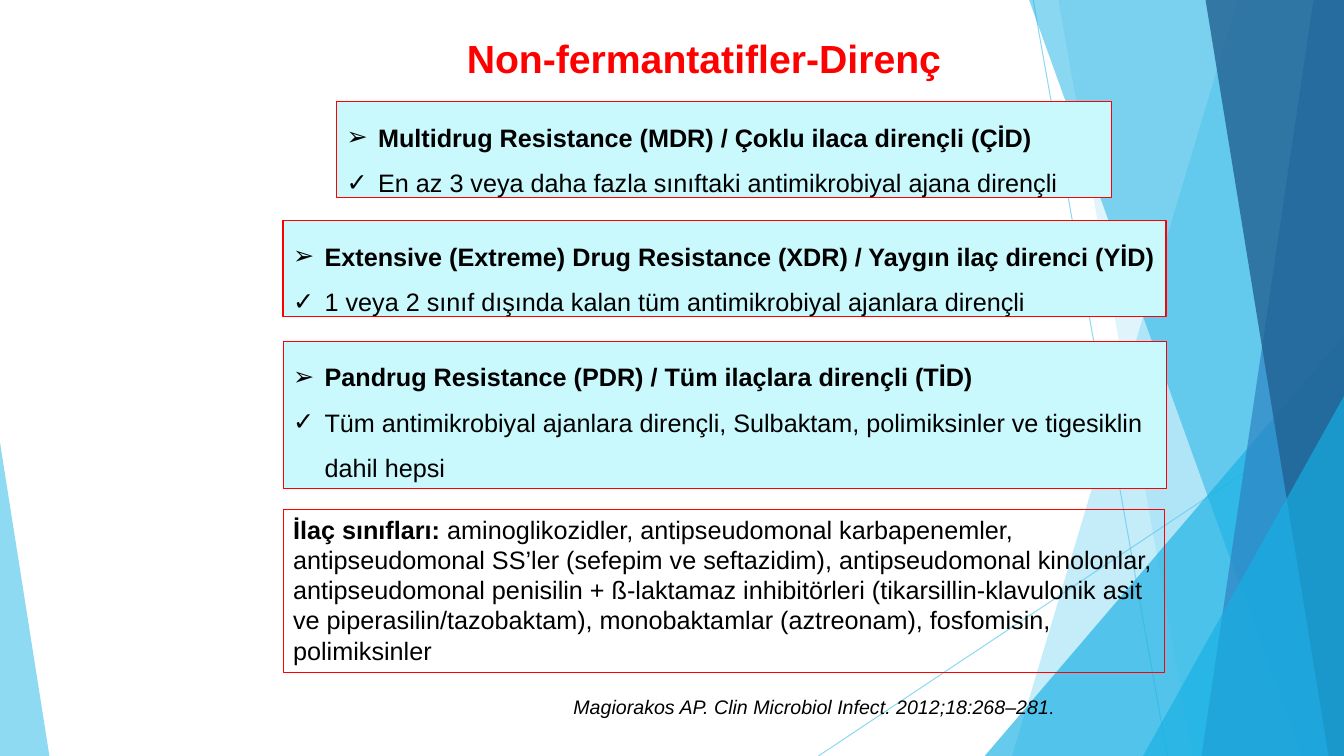
from dataclasses import dataclass

from pptx import Presentation
from pptx.dml.color import RGBColor
from pptx.enum.shapes import MSO_CONNECTOR as Connector, MSO_SHAPE as Preset
from pptx.enum.text import MSO_ANCHOR as Anchor, PP_ALIGN as Align
from pptx.oxml.ns import qn
from pptx.util import Pt
from lxml.etree import SubElement


@dataclass(frozen=True)
class Theme:
    red: str = "FF0000"
    black: str = "000000"
    panel: str = "C9F8FD"
    sky: str = "5FCBEF"
    cyan: str = "17B0E4"
    blue: str = "2E83C3"
    navy: str = "226292"
    font: str = "Arial"
    accent_font: str = "Karla"
    title: int = 28
    body: int = 18
    citation: int = 14


THEME = Theme()
WIDTH, HEIGHT = 960, 540

# Facets: left x at the top, left x at the bottom, colour, opacity
BACK_FACETS = [(884.2, 722.9, THEME.sky, 36), (756, 851.8, THEME.sky, 20)]
FRONT_FACETS = [
    (735.1, 929.5, THEME.cyan, 50),
    (938.2, 858.2, THEME.blue, 70),
    (861.1, 949, THEME.navy, 80),
]

# Definitions: box, line width, heading, explanation
DEFINITIONS = [
    ((240.5, 72.7, 553.7, 68.4), 1,
     "Multidrug Resistance (MDR) / Çoklu ilaca dirençli (ÇİD)",
     "En az 3 veya daha fazla sınıftaki antimikrobiyal ajana dirençli"),
    ((202.3, 157.7, 630.7, 68.4), 1,
     "Extensive (Extreme) Drug Resistance (XDR) / Yaygın ilaç direnci (YİD)",
     "1 veya 2 sınıf dışında kalan tüm antimikrobiyal ajanlara dirençli"),
    ((202.3, 244.1, 630.7, 105.1), 0.75,
     "Pandrug Resistance (PDR) / Tüm ilaçlara dirençli (TİD)",
     "Tüm antimikrobiyal ajanlara dirençli, Sulbaktam, polimiksinler ve "
     "tigesiklin dahil hepsi"),
]
CLASSES_LABEL = "İlaç sınıfları: "
CLASSES = (
    "aminoglikozidler, antipseudomonal karbapenemler, antipseudomonal SS’ler "
    "(sefepim ve seftazidim), antipseudomonal kinolonlar, antipseudomonal "
    "penisilin + ß-laktamaz inhibitörleri (tikarsillin-klavulonik asit ve "
    "piperasilin/tazobaktam), monobaktamlar (aztreonam), fosfomisin, polimiksinler"
)


def points(values):
    return [Pt(value) for value in values]


def set_opacity(color_format, percent):
    color = color_format._xFill.find(qn("a:srgbClr"))
    SubElement(color, qn("a:alpha")).set("val", str(percent * 1000))


def fill_translucent(shape, color, percent):
    shape.shadow.inherit = False
    shape.line.fill.background()
    shape.fill.solid()
    shape.fill.fore_color.rgb = RGBColor.from_string(color)
    set_opacity(shape.fill.fore_color, percent)


def style_span(span, size, color=THEME.black, bold=False, italic=False, font=THEME.font):
    span.font.name = font
    span.font.size = Pt(size)
    span.font.bold = bold
    span.font.italic = italic
    span.font.color.rgb = RGBColor.from_string(color)


def add_span(para, text, size, **style):
    span = para.add_run()
    span.text = text
    style_span(span, size, **style)


def set_bullet(para, symbol):
    properties = para._p.get_or_add_pPr()
    properties.set("marL", str(Pt(22.5)))
    properties.set("indent", str(-Pt(22.5)))
    SubElement(properties, qn("a:buFont")).set("typeface", THEME.font)
    SubElement(properties, qn("a:buChar")).set("char", symbol)


def draw_ray(page, start, end):
    ray = page.shapes.add_connector(Connector.STRAIGHT, *points(start + end))
    ray.line.width = Pt(0.75)
    ray.line.color.rgb = RGBColor.from_string(THEME.sky)
    set_opacity(ray.line.fill.fore_color, 70)
    SubElement(ray._element.spPr, qn("a:effectLst"))


def draw_facet(page, top_x, bottom_x, color, percent):
    outline = page.shapes.build_freeform(Pt(top_x), 0)
    corners = [(WIDTH, 0), (WIDTH, HEIGHT), (bottom_x, HEIGHT)]
    outline.add_line_segments([points(corner) for corner in corners], close=True)
    fill_translucent(outline.convert_to_shape(), color, percent)


def draw_triangle(page, box, apex, color, percent):
    triangle = page.shapes.add_shape(Preset.ISOSCELES_TRIANGLE, *points(box))
    triangle.adjustments[0] = apex
    fill_translucent(triangle, color, percent)


def draw_backdrop(page):
    draw_ray(page, (738, 0), (833.8, HEIGHT))
    draw_ray(page, (WIDTH, 290.2), (584.6, HEIGHT))
    for facet in BACK_FACETS:
        draw_facet(page, *facet)
    draw_triangle(page, (703.4, 239.8, 256.6, 300.2), 1, THEME.cyan, 66)
    for facet in FRONT_FACETS:
        draw_facet(page, *facet)
    draw_triangle(page, (816.5, 283, 143.5, 257), 1, THEME.cyan, 66)
    draw_triangle(page, (0, 316.1, 35.3, 223.9), 0, THEME.sky, 70)


def place_title(page, box):
    title = page.shapes.title
    title.left, title.top, title.width, title.height = points(box)
    frame = title.text_frame
    frame.text = "Non-fermantatifler-Direnç"
    frame.vertical_anchor = Anchor.TOP
    frame.word_wrap = True
    para = frame.paragraphs[0]
    para.alignment = Align.LEFT
    style_span(para.runs[0], THEME.title, THEME.red, bold=True)


def add_panel(page, box, line_width):
    panel = page.shapes.add_shape(Preset.RECTANGLE, *points(box))
    panel.shadow.inherit = False
    panel.fill.background()
    panel.line.color.rgb = RGBColor.from_string(THEME.red)
    panel.line.width = Pt(line_width)
    panel.text_frame.word_wrap = True
    panel.text_frame.vertical_anchor = Anchor.TOP
    panel.text_frame.paragraphs[0].alignment = Align.LEFT
    return panel


def add_definition(page, box, line_width, heading, explanation):
    panel = add_panel(page, box, line_width)
    panel.fill.solid()
    panel.fill.fore_color.rgb = RGBColor.from_string(THEME.panel)
    frame = panel.text_frame
    rows = [("➢", heading, True), ("✓", explanation, False)]
    paras = [frame.paragraphs[0], frame.add_paragraph()]
    for para, (symbol, text, bold) in zip(paras, rows):
        set_bullet(para, symbol)
        para.alignment = Align.LEFT
        para.line_spacing = 1.5
        add_span(para, text, THEME.body, bold=bold)


def add_drug_classes(page, box):
    para = add_panel(page, box, 0.75).text_frame.paragraphs[0]
    add_span(para, CLASSES_LABEL, THEME.body, bold=True)
    add_span(para, CLASSES, THEME.body)


def add_citation(page, box):
    frame = page.shapes.add_textbox(*points(box)).text_frame
    frame.word_wrap = True
    para = frame.paragraphs[0]
    add_span(para, "Magiorakos AP. Clin Microbiol Infect. 2012;18:268–281",
             THEME.citation, italic=True)
    add_span(para, ".", THEME.citation, italic=True, font=THEME.accent_font)


def main():
    deck = Presentation()
    deck.slide_width, deck.slide_height = Pt(WIDTH), Pt(HEIGHT)
    page = deck.slides.add_slide(deck.slide_layouts[5])

    draw_backdrop(page)
    place_title(page, (326.2, 20.9, 358.6, 51.1))
    for definition in DEFINITIONS:
        add_definition(page, *definition)
    add_drug_classes(page, (202.3, 363.6, 629.3, 116.6))
    add_citation(page, (402.5, 492.5, 429.1, 24.5))

    deck.save("out.pptx")


if __name__ == "__main__":
    main()
